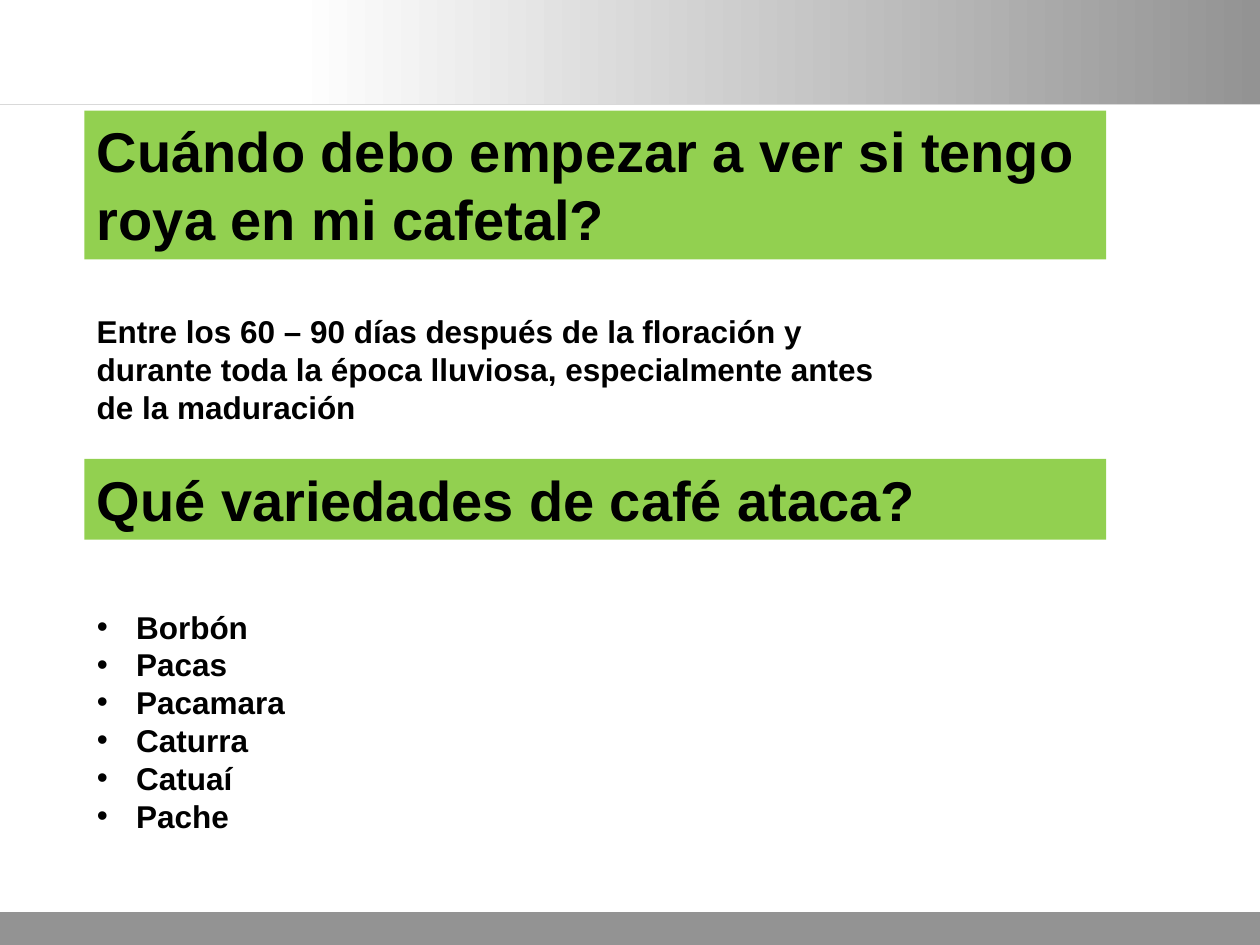
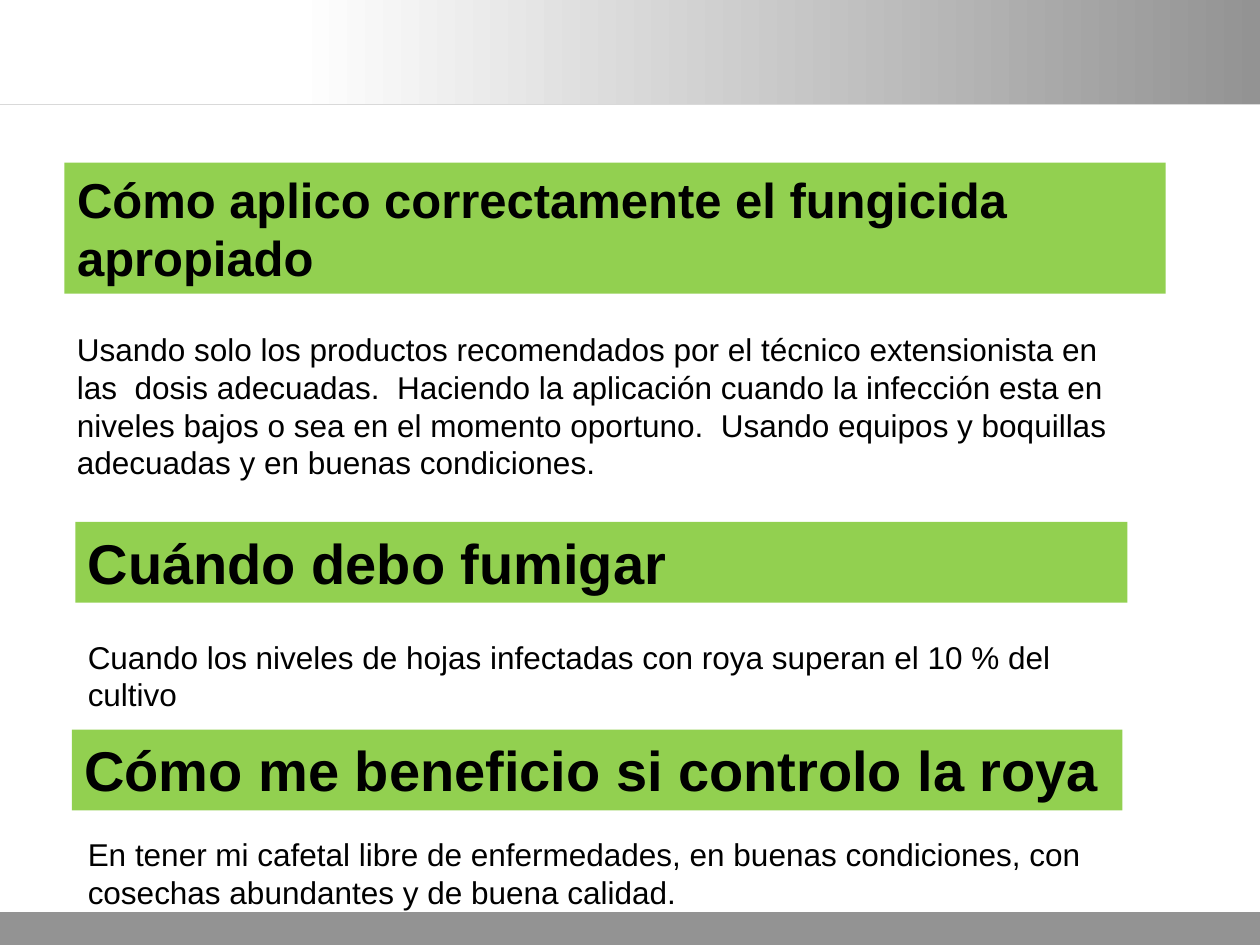
from lxml import etree
from pptx import Presentation
from pptx import util as u
from pptx.dml import color
from pptx.enum import shapes, text
from pptx.oxml import ns

COLORS = {"heading": "92D050", "band": "939393", "rule": "D9D9D9",
          "paper": "FFFFFF", "ink": "000000"}
WIDTH, HEIGHT = 25.4, 19.05
HEADER_LEFT, HEADER_HEIGHT, FOOTER_HEIGHT = 5.92, 2.11, 0.66
TITLE_AND_BODY, TITLE_ONLY = 1, 5


def rgb(name):
    return color.RGBColor.from_string(COLORS[name])


class CoffeeDeck:
    """Holds the shared style and the current slide of the coffee rust deck."""

    def __init__(self):
        self.deck = Presentation()
        self.deck.slide_width = u.Cm(WIDTH)
        self.deck.slide_height = u.Cm(HEIGHT)
        self.slide = None

    def new_slide(self, layout):
        self.slide = self.deck.slides.add_slide(self.deck.slide_layouts[layout])
        self.band(0, HEIGHT - FOOTER_HEIGHT, WIDTH, FOOTER_HEIGHT)
        header = self.band(HEADER_LEFT, 0, WIDTH - HEADER_LEFT, HEADER_HEIGHT)
        header.fill.gradient()
        header.fill.gradient_angle = 0
        for stop, name in zip(header.fill.gradient_stops, ("paper", "band")):
            stop.color.rgb = rgb(name)
        self.rule(HEADER_HEIGHT)

    def band(self, left, top, width, height):
        band = self.slide.shapes.add_shape(
            shapes.MSO_SHAPE.RECTANGLE, u.Cm(left), u.Cm(top), u.Cm(width), u.Cm(height))
        band.shadow.inherit = False
        band.fill.solid()
        band.fill.fore_color.rgb = rgb("band")
        band.line.fill.background()
        return band

    def rule(self, top):
        rule = self.slide.shapes.add_connector(
            shapes.MSO_CONNECTOR.STRAIGHT, u.Cm(WIDTH), u.Cm(top), u.Cm(0), u.Cm(top))
        rule.line.color.rgb = rgb("rule")
        rule.line.width = u.Pt(0.25)
        etree.SubElement(rule._element.spPr, ns.qn("a:effectLst"))

    def set_text(self, box, place, lines, size, bold, bullets=False):
        box.left, box.top, box.width, box.height = map(u.Cm, place)
        frame = box.text_frame
        frame.text = "\n".join(lines)
        frame.word_wrap = True
        frame.auto_size = text.MSO_AUTO_SIZE.SHAPE_TO_FIT_TEXT
        frame.vertical_anchor = text.MSO_ANCHOR.TOP
        for para in frame.paragraphs:
            para.alignment = text.PP_ALIGN.LEFT
            para.space_before = u.Pt(0)
            if bullets:
                self.bullet(para)
            para.font.name = "Arial"
            para.font.size = u.Pt(size)
            para.font.bold = bold
            para.font.color.rgb = rgb("ink")

    def bullet(self, para, indent=0.79):
        properties = para._p.get_or_add_pPr()
        properties.set("marL", str(u.Cm(indent)))
        properties.set("indent", str(-u.Cm(indent)))
        etree.SubElement(properties, ns.qn("a:buFont"), typeface="Arial")
        etree.SubElement(properties, ns.qn("a:buChar"), char="•")

    def new_box(self):
        return self.slide.shapes.add_textbox(0, 0, 0, 0)

    def heading(self, place, words, size=32, box=None):
        box = box or self.new_box()
        box.fill.solid()
        box.fill.fore_color.rgb = rgb("heading")
        self.set_text(box, place, [words], size, bold=True)

    def title(self, place, words, size=32):
        self.heading(place, words, size, self.slide.shapes.title)

    def answer(self, place, words, bold=False):
        self.set_text(self.new_box(), place, [words], 18, bold)

    def bullet_list(self, place, items):
        self.set_text(self.slide.placeholders[1], place, items, 18, bold=True, bullets=True)


def main():
    coffee = CoffeeDeck()

    coffee.new_slide(TITLE_AND_BODY)
    coffee.title((1.7, 2.23, 20.6, 3), "Cuándo debo empezar a ver si tengo roya en mi cafetal?")
    coffee.answer((1.7, 6.17, 16.61, 2.57),
                  "Entre los 60 – 90 días después de la floración y durante toda la época "
                  "lluviosa, especialmente antes de la maduración", bold=True)
    coffee.heading((1.7, 9.25, 20.6, 1.63), "Qué variedades de café ataca?")
    coffee.bullet_list((1.7, 12.12, 19.41, 5.64),
                       ["Borbón", "Pacas", "Pacamara", "Caturra", "Catuaí", "Pache"])

    coffee.new_slide(TITLE_ONLY)
    coffee.title((1.3, 3.28, 22.2, 2.64),
                 "Cómo aplico correctamente el fungicida apropiado", size=28)
    coffee.answer((1.3, 6.53, 21.79, 3.33),
                  "Usando solo los productos recomendados por el técnico extensionista en "
                  "las  dosis adecuadas.  Haciendo la aplicación cuando la infección esta en "
                  "niveles bajos o sea en el momento oportuno.  Usando equipos y boquillas "
                  "adecuadas y en buenas condiciones.")
    coffee.heading((1.52, 10.52, 21.21, 1.63), "Cuándo debo fumigar")
    coffee.answer((1.52, 12.73, 20.4, 1.8),
                  "Cuando los niveles de hojas infectadas con roya superan el 10 % del cultivo")
    coffee.heading((1.45, 14.71, 21.18, 1.63), "Cómo me beneficio si controlo la roya")
    coffee.answer((1.52, 16.71, 22.99, 1.8),
                  "En tener mi cafetal libre de enfermedades, en buenas condiciones, con "
                  "cosechas abundantes y de buena calidad.")

    coffee.deck.save("out.pptx")


if __name__ == "__main__":
    main()
